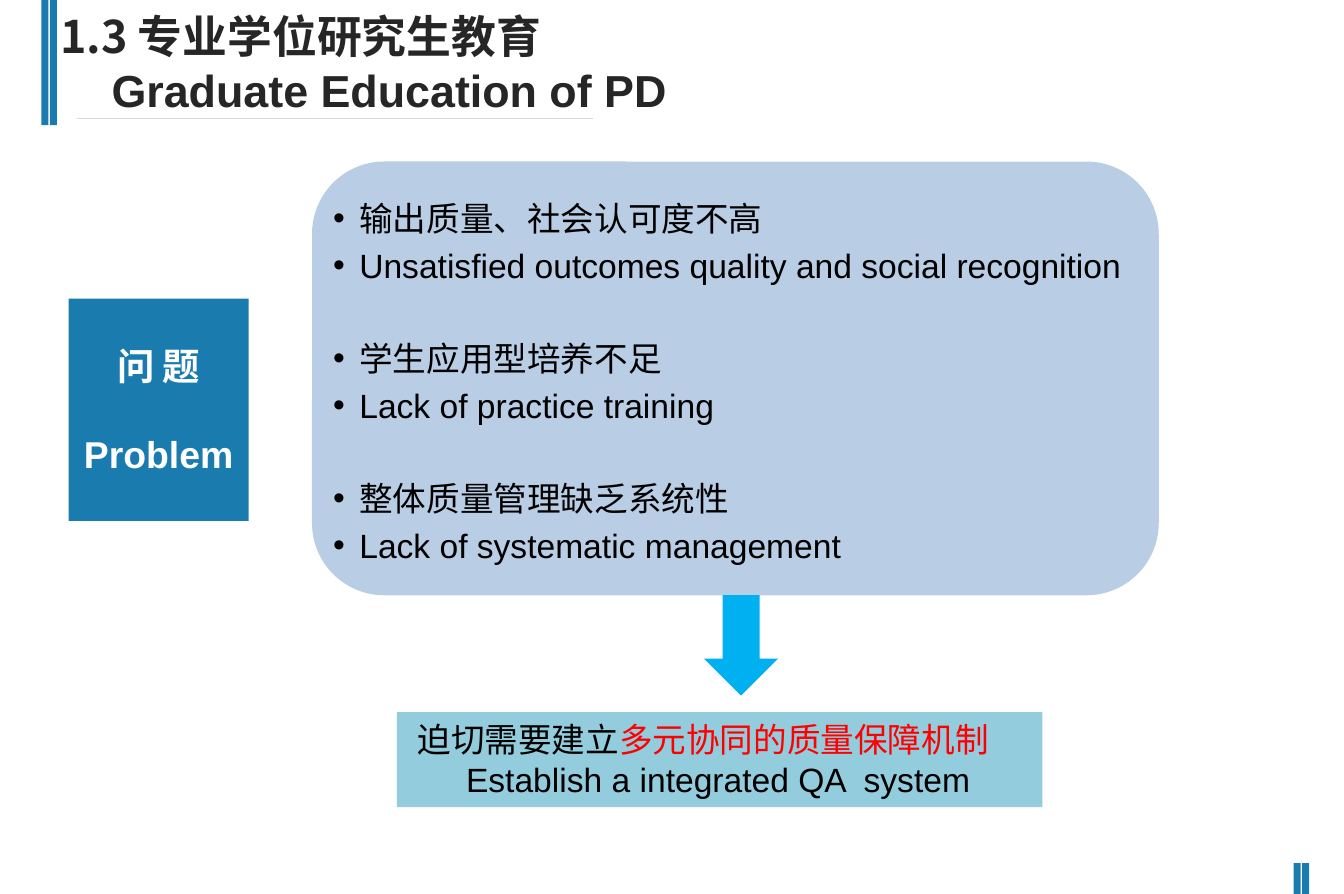
from dataclasses import dataclass

from lxml.etree import SubElement as Sub
from pptx import Presentation
from pptx.dml.color import RGBColor as RGB
from pptx.enum.shapes import MSO_CONNECTOR as Conn, MSO_SHAPE as Kind
from pptx.enum.text import MSO_ANCHOR as Anchor, PP_ALIGN as Align
from pptx.oxml.ns import qn
from pptx.util import Pt

BLUE = RGB(0x1A, 0x7B, 0xAE)
PALE = RGB(0xB9, 0xCD, 0xE5)
TEAL = RGB(0x93, 0xCD, 0xDD)
SKY = RGB(0x00, 0xB0, 0xF0)
GRAY = RGB(0xD9, 0xD9, 0xD9)
DARK = RGB(0x26, 0x26, 0x26)
BLACK = RGB(0, 0, 0)
WHITE = RGB(0xFF, 0xFF, 0xFF)
RED = RGB(0xFF, 0, 0)
LATIN, HAN = "Arial", "Noto Sans CJK SC"


@dataclass
class Box:
    left: float
    top: float
    width: float
    height: float

    def pts(self) -> tuple:
        return Pt(self.left), Pt(self.top), Pt(self.width), Pt(self.height)


@dataclass
class Line:
    text: str
    size: float
    color: RGB = BLACK
    face: str = LATIN
    bold: bool = False
    align: Align = Align.LEFT
    indent: float = 0
    before: float = 0
    pitch: float = 0
    bullet: bool = False


def style(run, line: Line, color: RGB) -> None:
    font = run.font
    font.size, font.bold, font.name = Pt(line.size), line.bold, line.face
    font.color.rgb = color
    Sub(font._element, qn("a:ea"), typeface=HAN)


def write(frame, lines: list[Line]) -> None:
    for i, line in enumerate(lines):
        para = frame.paragraphs[0] if i == 0 else frame.add_paragraph()
        para.text = line.text
        para.alignment = line.align
        para.space_before = Pt(line.before)
        if line.pitch:
            para.line_spacing = Pt(line.pitch)
        props = para._p.get_or_add_pPr()
        props.set("marL", str(Pt(line.indent)))
        if line.bullet:
            props.set("indent", str(Pt(-line.indent)))
            Sub(props, qn("a:buFont"), typeface=LATIN)
            Sub(props, qn("a:buChar"), char="•")
        for run in para.runs:
            style(run, line, line.color)


def draw(slide, kind: Kind, box: Box, fill: RGB):
    shape = slide.shapes.add_shape(kind, *box.pts())
    shape.shadow.inherit = False
    shape.fill.solid()
    shape.fill.fore_color.rgb = fill
    shape.line.fill.background()
    shape.text_frame.word_wrap = True
    return shape


def rule(slide, x1: float, x2: float, y: float) -> None:
    line = slide.shapes.add_connector(Conn.STRAIGHT, Pt(x1), Pt(y), Pt(x2), Pt(y))
    line.line.color.rgb = GRAY
    line.line.width = Pt(0.75)
    Sub(line._element.spPr, qn("a:effectLst"))


def title(slide) -> None:
    frame = slide.shapes.add_textbox(*Box(25.2, 1.3, 582.5, 65.5).pts()).text_frame
    frame.word_wrap = True
    write(frame, [
        Line("1.3 专业学位研究生教育", 24, DARK, HAN, True),
        Line("Graduate Education of PD", 24, DARK, bold=True, indent=27.5),
    ])


def problem(slide) -> None:
    frame = draw(slide, Kind.RECTANGLE, Box(36.8, 160, 96.5, 119), BLUE).text_frame
    frame.vertical_anchor = Anchor.MIDDLE
    write(frame, [
        Line("问 题", 20, WHITE, bold=True, align=Align.CENTER),
        Line("Problem", 20, WHITE, bold=True, align=Align.CENTER, before=23),
    ])


def issues(slide) -> None:
    pairs = [
        ("输出质量、社会认可度不高", "Unsatisfied outcomes quality and social recognition"),
        ("学生应用型培养不足", "Lack of practice training"),
        ("整体质量管理缺乏系统性", "Lack of systematic management"),
    ]
    frame = draw(slide, Kind.ROUNDED_RECTANGLE, Box(167.2, 86.5, 453.6, 232.3), PALE).text_frame
    frame.margin_left = frame.margin_right = 0
    frame.vertical_anchor = Anchor.MIDDLE
    lines = []
    for i, (han, english) in enumerate(pairs):
        gap = 25 if i else 0
        lines += [
            Line(han, 18, face=HAN, indent=14, before=gap, pitch=25, bullet=True),
            Line(english, 18, indent=14, pitch=25, bullet=True),
        ]
    write(frame, lines)


def answer(slide) -> None:
    frame = draw(slide, Kind.RECTANGLE, Box(212.6, 381.5, 345.8, 50.8), TEAL).text_frame
    frame.vertical_anchor = Anchor.TOP
    need = Line("迫切需要建立", 18, face=HAN, indent=4)
    write(frame, [need, Line("Establish a integrated QA  system", 18, indent=30)])
    goal = frame.paragraphs[0].add_run()
    goal.text = "多元协同的质量保障机制"
    style(goal, need, RED)


def main() -> None:
    deck = Presentation()
    deck.slide_width, deck.slide_height = Pt(720), Pt(478.8)
    slide = deck.slides.add_slide(deck.slide_layouts[6])
    for left, top, height in ((22.2, 0, 67), (693, 462.3, 16.5)):
        for step in (0, 4.6):
            draw(slide, Kind.RECTANGLE, Box(left + step, top, 3.8, height), BLUE)
    rule(slide, 41, 317.5, 63.4)
    problem(slide)
    issues(slide)
    draw(slide, Kind.DOWN_ARROW, Box(377.2, 318.8, 39.6, 53.8), SKY)
    answer(slide)
    title(slide)
    deck.save("out.pptx")


if __name__ == "__main__":
    main()
